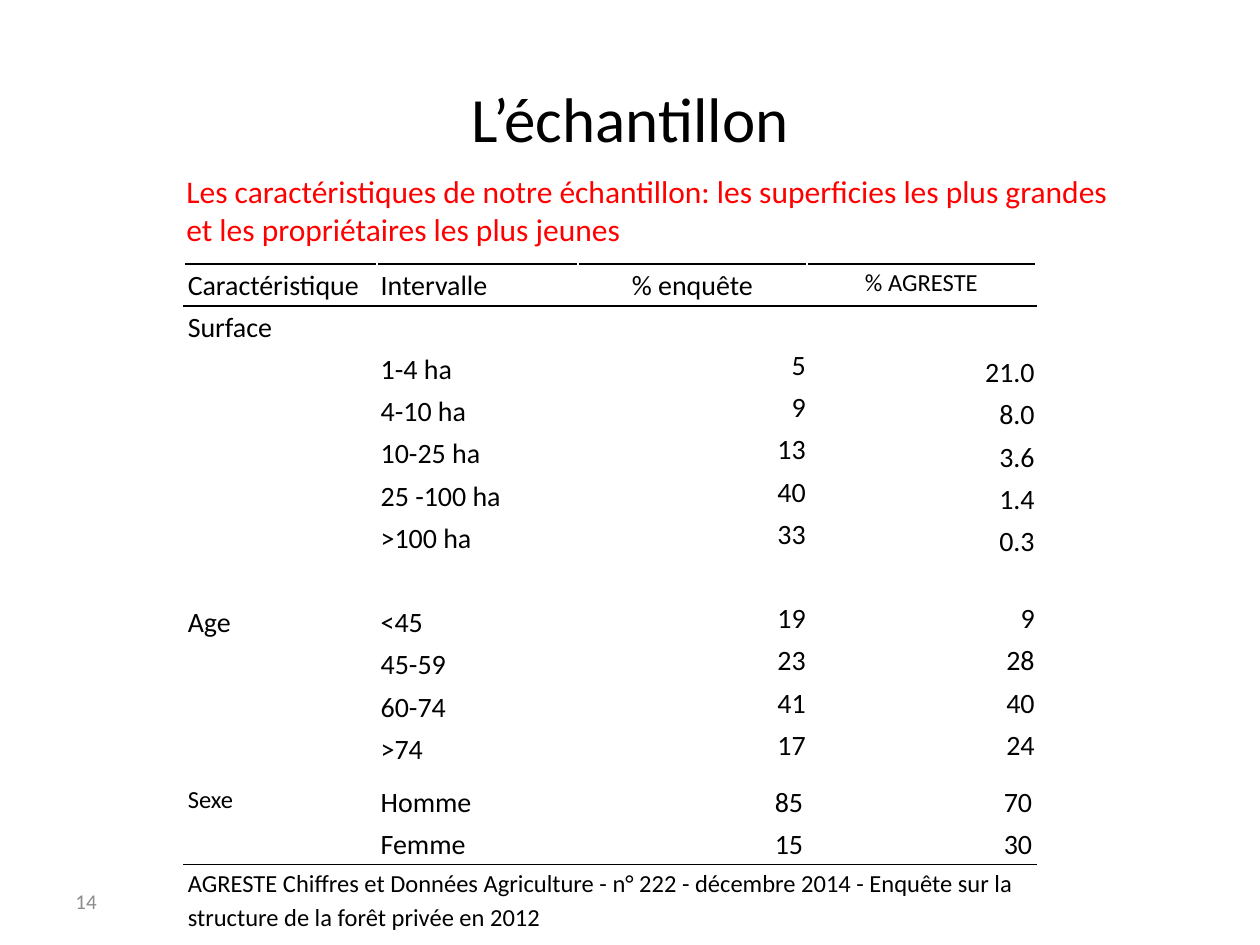
import lxml.etree
import pptx
import pptx.dml.color
import pptx.enum.text
import pptx.oxml.ns
import pptx.util

PX = 914400 / 126
BLACK = pptx.dml.color.RGBColor(0, 0, 0)
WHITE = pptx.dml.color.RGBColor(255, 255, 255)
RED = pptx.dml.color.RGBColor(255, 0, 0)
GREY = pptx.dml.color.RGBColor(140, 140, 140)
ALIGN = pptx.enum.text.PP_ALIGN
ANCHOR = pptx.enum.text.MSO_ANCHOR
qn = pptx.oxml.ns.qn


def write(frame, text, size, color, align=ALIGN.LEFT, space=None):
    par = frame.paragraphs[0]
    par.alignment = align
    par.line_spacing = space
    run = par.add_run()
    run.text = text
    for key, value in {"name": "Calibri", "size": pptx.util.Pt(size)}.items():
        setattr(run.font, key, value)
    run.font.color.rgb = color


def border(cell, colors):
    """Set 1 pt lines on left, right, top and bottom, ahead of the fill."""
    props = cell._tc.get_or_add_tcPr()
    for i, (side, color) in enumerate(zip("LRTB", colors)):
        line = lxml.etree.Element(qn("a:ln" + side), w="12700")
        fill = lxml.etree.SubElement(line, qn("a:solidFill"))
        lxml.etree.SubElement(fill, qn("a:srgbClr"), val=str(color))
        props.insert(i, line)


deck = pptx.Presentation()
deck.slide_width = round(1260 * PX)
deck.slide_height = round(945 * PX)
slide = deck.slides.add_slide(deck.slide_layouts[5])

title = slide.shapes.title
for key, value in {"left": 63, "top": 38, "width": 1134, "height": 158}.items():
    setattr(title, key, round(value * PX))
title.text_frame.vertical_anchor = ANCHOR.MIDDLE
write(title.text_frame, "L’échantillon", 36, BLACK, ALIGN.CENTER)

# Table
ROWS = [
    ["Caractéristique", "Intervalle", "% enquête", "% AGRESTE"],
    ["Surface", "", "", ""],
    ["", "1-4 ha", "5", "21.0"],
    ["", "4-10 ha", "9", "8.0"],
    ["", "10-25 ha", "13", "3.6"],
    ["", "25 -100 ha", "40", "1.4"],
    ["", ">100 ha", "33", "0.3"],
    ["", "", "", ""],
    ["Age", "<45", "19", "9"],
    ["", "45-59", "23", "28"],
    ["", "60-74", "41", "40"],
    ["", ">74", "17", "24"],
    ["Sexe", "Homme", "85", "70"],
    ["", "Femme", "15", "30"],
    ["AGRESTE Chiffres et Données Agriculture - n° 222 - décembre 2014 - "
     "Enquête sur la structure de la forêt privée en 2012", "", "", ""],
]
SMALL = {(0, 3), (12, 0), (14, 0)}
RULES = {0, 1, 14}  # rows with a black line above

box = slide.shapes.add_table(len(ROWS), 4, *(round(n * PX) for n in (184, 264, 852, 672)))
table = box.table
table.first_row = table.horz_banding = False
for col, width in zip(table.columns, (193, 201, 229, 229)):
    col.width = round(width * PX)

for r, row in enumerate(ROWS):
    # rows are 42.2 px high on average; the age group ends with a gap
    high = (r + 1) * 211 // 5 - r * 211 // 5 + (11 if r == 11 else 0)
    table.rows[r].height = round(high * PX)
    for c, text in enumerate(row):
        cell = table.cell(r, c)
        data = c > 1 and 2 <= r <= 11
        side = pptx.util.Inches(0.01 if data else 0.03)
        top = pptx.util.Inches(0.01 if data else 0)
        margins = {"margin_left": side, "margin_right": side,
                   "margin_top": top, "margin_bottom": 0}
        for key, value in margins.items():
            setattr(cell, key, value)
        cell.vertical_anchor = ANCHOR.BOTTOM if c == 3 and 2 <= r <= 6 else ANCHOR.TOP
        cell.fill.background()
        above, below = (BLACK if n in RULES else WHITE for n in (r, r + 1))
        border(cell, (WHITE, WHITE, above, below))
        if text:
            align = ALIGN.LEFT if c < 2 else ALIGN.RIGHT if r else ALIGN.CENTER
            size = 14 if (r, c) in SMALL else 16
            write(cell.text_frame, text, size, BLACK, align, None if data else 1.15)
table.cell(14, 0).merge(table.cell(14, 3))

# Page number and subtitle
NOTES = [
    ((63, 876, 294, 50), "14", 12, GREY, ANCHOR.MIDDLE),
    ((174, 166, 953, 89), "Les caractéristiques de notre échantillon: les superficies "
     "les plus grandes et les propriétaires les plus jeunes", 18, RED, ANCHOR.TOP),
]
for place, text, size, color, anchor in NOTES:
    frame = slide.shapes.add_textbox(*(round(n * PX) for n in place)).text_frame
    frame.word_wrap = True
    frame.vertical_anchor = anchor
    write(frame, text, size, color)

deck.save("out.pptx")
